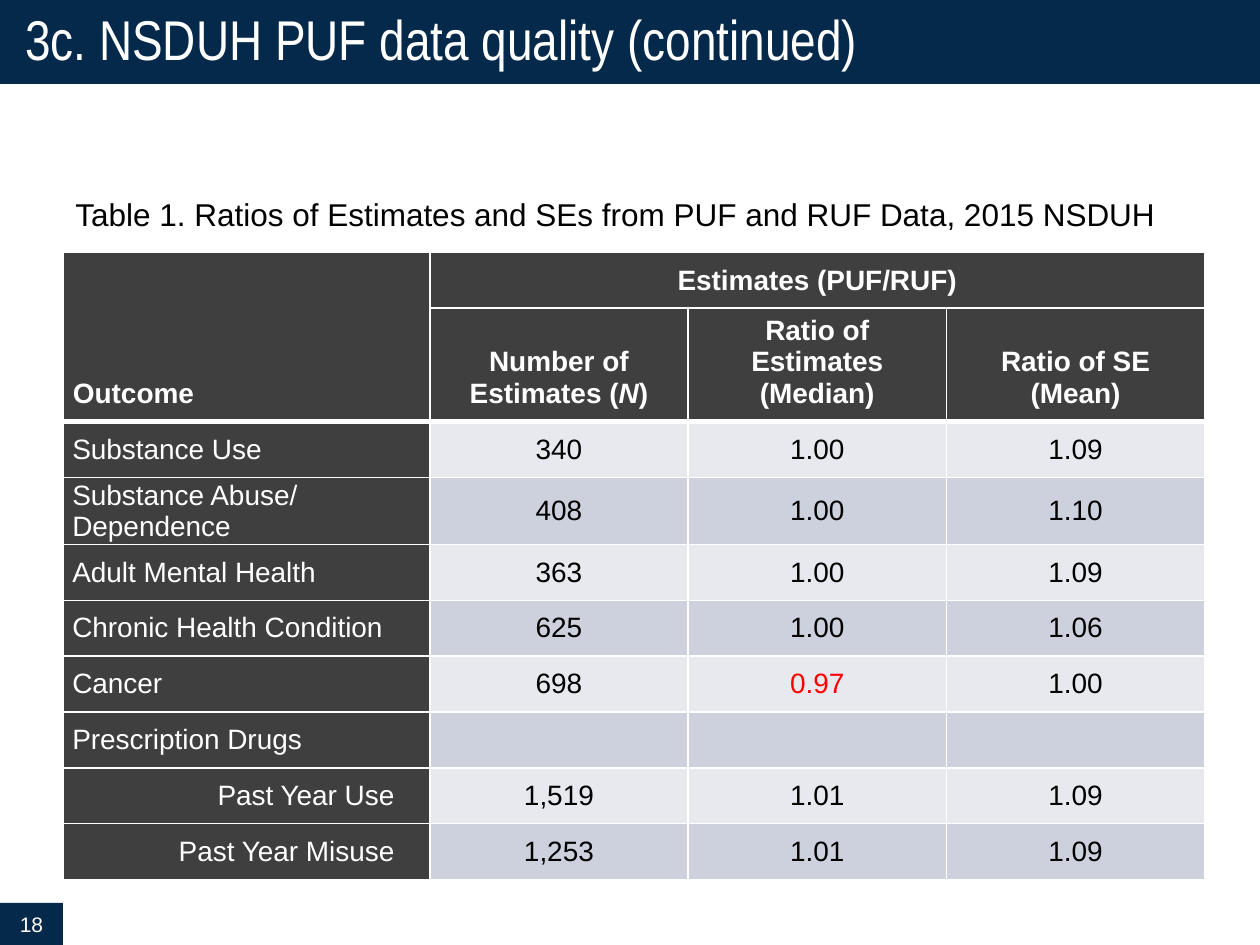
from lxml import etree
from pptx import Presentation
from pptx.dml.color import RGBColor
from pptx.enum.shapes import MSO_SHAPE
from pptx.enum.text import MSO_ANCHOR, PP_ALIGN
from pptx.oxml.ns import qn
from pptx.util import Pt

RECT = MSO_SHAPE.RECTANGLE
LEFT, CENTER, RIGHT = PP_ALIGN.LEFT, PP_ALIGN.CENTER, PP_ALIGN.RIGHT
MIDDLE, BOTTOM = MSO_ANCHOR.MIDDLE, MSO_ANCHOR.BOTTOM

NAVY, DARK, WHITE, BLACK, RED = "04294A", "3F3F3F", "FFFFFF", "000000", "FF0000"
BANDS = ["E7E9EF", "CCD1DD"]
COL_WIDTHS = [209.3, 147.6, 147.6, 147.6]
ROW_HEIGHT, HEADER_HEIGHT, TWO_LINE_HEIGHT = 31.9, 59.3, 36.6
HEADERS = [
    [("Number of Estimates (", False), ("N", True), (")", False)],
    [("Ratio of Estimates (Median)", False)],
    [("Ratio of SE (Mean)", False)],
]
OUTCOMES = [
    ("Substance Use", "340", "1.00", "1.09"),
    ("Substance Abuse/ Dependence", "408", "1.00", "1.10"),
    ("Adult Mental Health", "363", "1.00", "1.09"),
    ("Chronic Health Condition", "625", "1.00", "1.06"),
    ("Cancer", "698", "0.97", "1.00"),
    ("Prescription Drugs", "", "", ""),
    ("Past Year Use", "1,519", "1.01", "1.09"),
    ("Past Year Misuse", "1,253", "1.01", "1.09"),
]


def rgb(color):
    return RGBColor.from_string(color)


def write(tf, runs, size, color, font="Arial", align=LEFT, bold=False):
    p = tf.paragraphs[0]
    p.alignment = align
    p.font.name = font
    p.font.size = Pt(size)
    p.font.bold = bold
    p.font.color.rgb = rgb(color)
    for text, italic in runs:
        r = p.add_run()
        r.text = text
        if italic:
            r.font.italic = True
    return p


def add_bar(s, x, y, w, h, text, size, font="Arial", align=LEFT, inset=7.2):
    sp = s.shapes.add_shape(RECT, Pt(x), Pt(y), Pt(w), Pt(h))
    sp.shadow.inherit = False
    sp.fill.solid()
    sp.fill.fore_color.rgb = rgb(NAVY)
    sp.line.fill.background()
    tf = sp.text_frame
    tf.word_wrap = True
    tf.vertical_anchor = MIDDLE
    tf.margin_left = tf.margin_right = Pt(inset)
    return write(tf, [(text, False)], size, WHITE, font, align)


def add_caption(s, x, y, w, h, text):
    tf = s.shapes.add_textbox(Pt(x), Pt(y), Pt(w), Pt(h)).text_frame
    tf.word_wrap = True
    write(tf, [(text, False)], 18, BLACK)


def set_borders(cell, top=1, bottom=1):
    tc_pr = cell._tc.get_or_add_tcPr()
    for side, width in (("L", 1), ("R", 1), ("T", top), ("B", bottom)):
        ln = etree.SubElement(tc_pr, qn(f"a:ln{side}"), w=str(Pt(width)))
        fill = etree.SubElement(ln, qn("a:solidFill"))
        etree.SubElement(fill, qn("a:srgbClr"), val=WHITE)


def style_cell(cell, fill, anchor=MIDDLE, margins=(5, 0, 5, 0), top=1, bottom=1):
    set_borders(cell, top, bottom)
    cell.fill.solid()
    cell.fill.fore_color.rgb = rgb(fill)
    cell.vertical_anchor = anchor
    left, above, right, below = margins
    cell.margin_left, cell.margin_top = Pt(left), Pt(above)
    cell.margin_right, cell.margin_bottom = Pt(right), Pt(below)


def fill_header(table):
    for c in range(4):
        style_cell(table.cell(0, c), DARK, BOTTOM if c == 0 else MIDDLE,
                   (5.4, 3.6, 5.4, 7.2) if c == 0 else (0.9, 0.9, 0.9, 0),
                   bottom=3 if c == 0 else 1)
        style_cell(table.cell(1, c), DARK, BOTTOM, (5, 0, 5, 7.2), bottom=3)
    table.cell(0, 0).merge(table.cell(1, 0))
    table.cell(0, 1).merge(table.cell(0, 3))
    write(table.cell(0, 0).text_frame, [("Outcome", False)], 16, WHITE, bold=True)
    write(table.cell(0, 1).text_frame, [("Estimates (PUF/RUF)", False)], 16, WHITE,
          align=CENTER, bold=True)
    for c, runs in enumerate(HEADERS, 1):
        write(table.cell(1, c).text_frame, runs, 16, WHITE, align=CENTER, bold=True)


def fill_outcomes(table):
    for i, (outcome, *values) in enumerate(OUTCOMES):
        top = 3 if i == 0 else 1
        indented = outcome.startswith("Past Year")
        label = table.cell(i + 2, 0)
        style_cell(label, DARK, margins=(5, 0, 20.2 if indented else 5, 0), top=top)
        write(label.text_frame, [(outcome, False)], 16, WHITE,
              align=RIGHT if indented else LEFT)
        for c, value in enumerate(values, 1):
            cell = table.cell(i + 2, c)
            style_cell(cell, BANDS[i % 2], top=top)
            if value:
                write(cell.text_frame, [(value, False)], 16,
                      RED if value == "0.97" else BLACK, align=CENTER)


def add_ratio_table(s, x, y):
    heights = [ROW_HEIGHT, HEADER_HEIGHT] + [ROW_HEIGHT] * len(OUTCOMES)
    heights[3] = TWO_LINE_HEIGHT
    table = s.shapes.add_table(len(heights), len(COL_WIDTHS), Pt(x), Pt(y),
                               Pt(sum(COL_WIDTHS)), Pt(sum(heights))).table
    table.first_row = table.horz_banding = False
    for column, width in zip(table.columns, COL_WIDTHS):
        column.width = Pt(width)
    for row, height in zip(table.rows, heights):
        row.height = Pt(height)
    fill_header(table)
    fill_outcomes(table)


def main():
    prs = Presentation()
    prs.slide_width, prs.slide_height = Pt(720), Pt(540)
    s = prs.slides.add_slide(prs.slide_layouts[6])
    title = add_bar(s, 0, 0, 720, 48, "3c. NSDUH PUF data quality (continued)", 32,
                    "Arial Narrow", inset=14.4)
    title.line_spacing = 0.9
    add_caption(s, 36, 108, 648, 374.4,
                "Table 1. Ratios of Estimates and SEs from PUF and RUF Data, 2015 NSDUH")
    add_bar(s, 0, 516, 36, 24, "18", 12, align=CENTER)
    add_ratio_table(s, 36.3, 144.2)
    prs.save("out.pptx")


if __name__ == "__main__":
    main()
